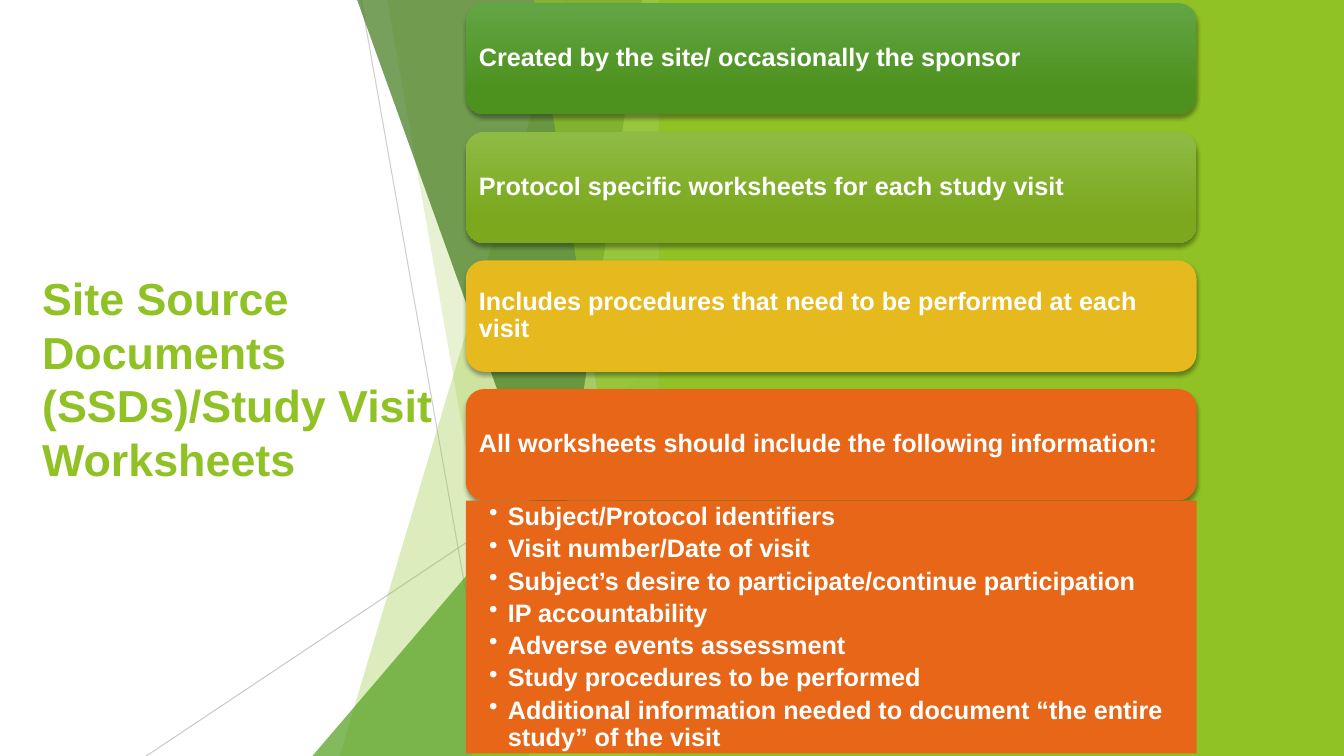
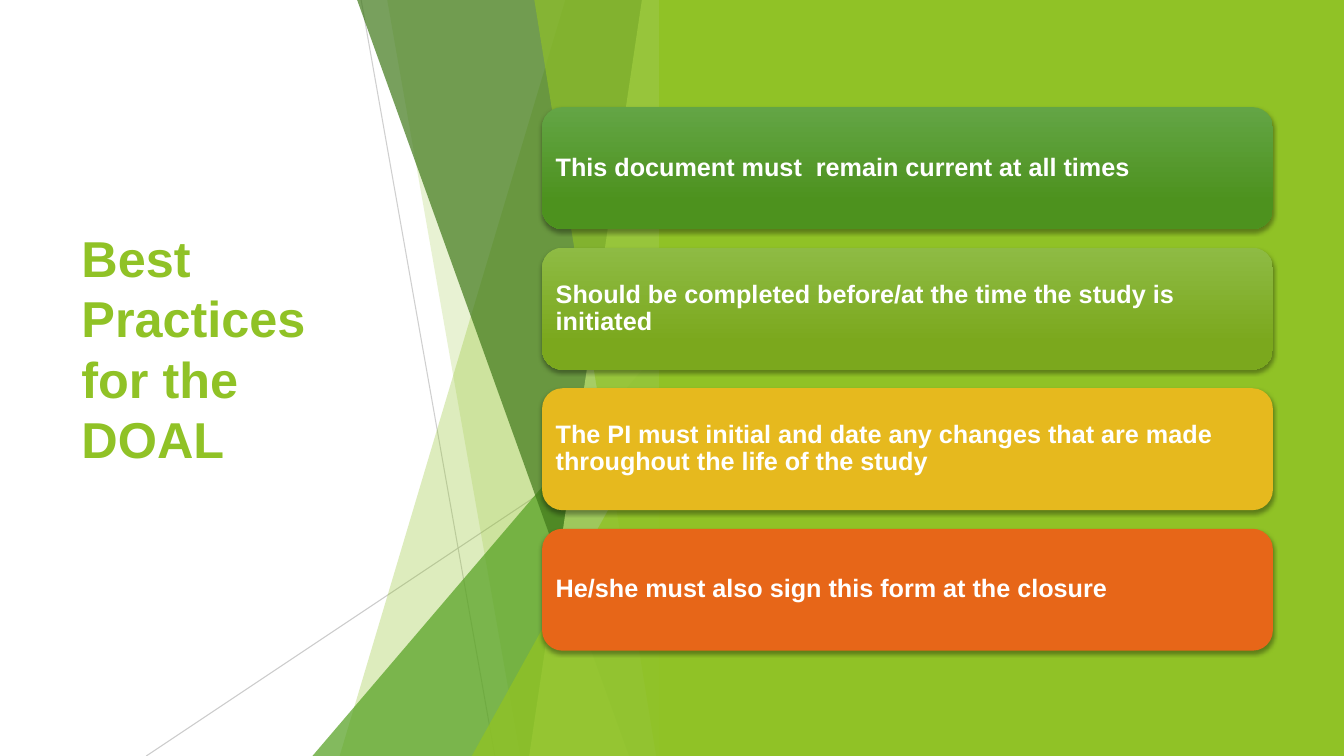
from pptx import Presentation
from pptx.dml.color import RGBColor
from pptx.enum import shapes, text
from pptx.oxml.ns import qn
from pptx.util import Pt
from lxml import etree

WIDTH, HEIGHT = 960, 540
FONT = "Arial"
COLORS = {
    "lime": "90C226", "green": "54A021", "dark green": "3F7819",
    "pale lime": "C0E474", "gray": "BFBFBF", "white": "FFFFFF", "black": "000000",
    "yellow": "E6B91E", "orange": "E76618",
    "card green top": "63A545", "card green": "4D921E",
    "card lime top": "8EBB44", "card lime": "7BA81D",
}
# One colour for a plain card, two for a gradient from top to bottom
CARD_FILLS = [("card green top", "card green"), ("card lime top", "card lime"),
              ("yellow",), ("orange",)]

# Start, end, opacity
RAYS = [((258, 0), (353.5, HEIGHT), 75), ((479.5, 290), (104.5, HEIGHT), 80)]
# Bands: left edge at top and at bottom. Triangles: left and top edge.
FACET_RIGHT, FACET_TOP = 479.5, -0.6
FACETS = [
    ("band", 404, 242.6, "lime", 30),
    ("band", 276.5, 371.5, "lime", 20),
    ("triangle", 223.2, 239.8, "green", 72),
    ("band", 254.9, 449.3, "dark green", 70),
    ("band", 458.6, 378, "pale lime", 70),
    ("band", 381.6, 468.7, "lime", 65),
    ("triangle", 337, 283, "lime", 80),
]
PANEL_LEFT = 470.8
CARD_WIDTH = 522

SLIDES = [
    {
        "title": "Site Source Documents (SSDs)/Study Visit Worksheets",
        "title_size": 32,
        "title_box": (23, 108.7, 314, 322.6),
        "cards_at": (332.7, 2.2), "card_height": 79.6, "card_step": 91.9,
        "cards": [
            "Created by the site/ occasionally the sponsor",
            "Protocol specific worksheets for each study visit",
            "Includes procedures that need to be performed at each visit",
            "All worksheets should include the following information:",
        ],
        "bullets": [
            "Subject/Protocol identifiers",
            "Visit number/Date of visit",
            "Subject’s desire to participate/continue participation",
            "IP accountability",
            "Adverse events assessment",
            "Study procedures to be performed",
            "Additional information needed to document “the entire study” of the visit",
        ],
    },
    {
        "title": "Best Practices for the DOAL",
        "title_size": 36,
        "title_box": (51.1, 108.7, 203, 279.6),
        "cards_at": (387.2, 76.5), "card_height": 87.1, "card_step": 100.4,
        "cards": [
            "This document must  remain current at all times",
            "Should be completed before/at the time the study is initiated",
            "The PI must initial and date any changes that are made throughout the life of the study",
            "He/she must also sign this form at the closure",
        ],
        "bullets": [],
    },
]


def rgb(name):
    return RGBColor.from_string(COLORS[name])


def points(*lengths):
    return [Pt(length) for length in lengths]


def set_opacity(element, percent):
    for color in element.iter(qn("a:srgbClr")):
        etree.SubElement(color, qn("a:alpha"), val=str(percent * 1000))


def paint(shape, *colors, opacity=100):
    """Fill with one colour or a downward gradient, with no outline or shadow."""
    shape.shadow.inherit = False
    shape.line.fill.background()
    if len(colors) == 1:
        shape.fill.solid()
        shape.fill.fore_color.rgb = rgb(colors[0])
    else:
        shape.fill.gradient()
        shape.fill.gradient_angle = 270
        for stop, color, position in zip(shape.fill.gradient_stops, colors, (0, 0.78)):
            stop.color.rgb = rgb(color)
            stop.position = position
    if opacity < 100:
        set_opacity(shape._element.spPr, opacity)


def add_shadow(shape):
    effects = shape._element.spPr.find(qn("a:effectLst"))
    shadow = etree.SubElement(effects, qn("a:outerShdw"), blurRad=str(Pt(3)),
                              dist=str(Pt(2)), dir="5400000", rotWithShape="0")
    etree.SubElement(shadow, qn("a:srgbClr"), val=COLORS["black"])
    set_opacity(shadow, 35)


def write(shape, lines, size, color, anchor, margins, line_spacing=1.0):
    frame = shape.text_frame
    frame.word_wrap = True
    frame.vertical_anchor = anchor
    (frame.margin_left, frame.margin_top,
     frame.margin_right, frame.margin_bottom) = points(*margins)
    frame.text = "\n".join(lines)
    for paragraph in frame.paragraphs:
        paragraph.alignment = text.PP_ALIGN.LEFT
        paragraph.line_spacing = line_spacing
        paragraph.font.name = FONT
        paragraph.font.size = Pt(size)
        paragraph.font.bold = True
        paragraph.font.color.rgb = rgb(color)
    return frame.paragraphs


def add_ray(slide, start, end, opacity):
    ray = slide.shapes.add_connector(shapes.MSO_CONNECTOR.STRAIGHT, *points(*start, *end))
    ray.line.width = Pt(0.75)
    ray.line.color.rgb = rgb("gray")
    properties = ray._element.spPr
    set_opacity(properties, opacity)
    etree.SubElement(properties, qn("a:effectLst"))


def add_facet(slide, kind, first, second, color, opacity):
    if kind == "band":
        builder = slide.shapes.build_freeform(*points(first, FACET_TOP))
        corners = [(FACET_RIGHT, FACET_TOP), (FACET_RIGHT, HEIGHT), (second, HEIGHT)]
        builder.add_line_segments([points(*corner) for corner in corners], close=True)
        facet = builder.convert_to_shape()
    else:
        facet = slide.shapes.add_shape(
            shapes.MSO_SHAPE.ISOSCELES_TRIANGLE,
            *points(first, second, FACET_RIGHT - first, HEIGHT - second))
        facet.adjustments[0] = 1
    paint(facet, color, opacity=opacity)


def add_backdrop(slide):
    for ray in RAYS:
        add_ray(slide, *ray)
    for facet in FACETS:
        add_facet(slide, *facet)
    panel = slide.shapes.add_shape(
        shapes.MSO_SHAPE.RECTANGLE, *points(PANEL_LEFT, 0, WIDTH - PANEL_LEFT, HEIGHT))
    paint(panel, "lime")


def add_title(slide, content):
    title = slide.shapes.add_textbox(*points(*content["title_box"]))
    write(title, [content["title"]], content["title_size"], "lime",
          text.MSO_ANCHOR.MIDDLE, (7.2, 3.6, 7.2, 3.6))


def add_cards(slide, content):
    """Stack the cards and return the bottom edge of the last one."""
    left, top = content["cards_at"]
    height = content["card_height"]
    for index, (label, fill) in enumerate(zip(content["cards"], CARD_FILLS)):
        card_top = top + index * content["card_step"]
        card = slide.shapes.add_shape(shapes.MSO_SHAPE.ROUNDED_RECTANGLE,
                                      *points(left, card_top, CARD_WIDTH, height))
        paint(card, *fill)
        add_shadow(card)
        write(card, [label], 18, "white", text.MSO_ANCHOR.MIDDLE, (5.5, 5, 5.5, 5), 0.9)
    return card_top + height


def add_bullets(slide, lines, left, top):
    box = slide.shapes.add_shape(shapes.MSO_SHAPE.RECTANGLE,
                                 *points(left, top, CARD_WIDTH, 180.7))
    paint(box, "orange")
    for paragraph in write(box, lines, 18, "white", text.MSO_ANCHOR.TOP,
                           (16.6, 2.3, 10, 2.3), 0.9):
        paragraph.space_after = Pt(3.6)
        properties = paragraph._p.get_or_add_pPr()
        properties.set("marL", str(Pt(13.5)))
        properties.set("indent", str(-Pt(13.5)))
        bullet = etree.Element(qn("a:buChar"), char="•")
        properties.find(qn("a:defRPr")).addprevious(bullet)


def main():
    presentation = Presentation()
    presentation.slide_width, presentation.slide_height = points(WIDTH, HEIGHT)
    for content in SLIDES:
        slide = presentation.slides.add_slide(presentation.slide_layouts[6])
        add_title(slide, content)
        add_backdrop(slide)
        cards_bottom = add_cards(slide, content)
        if content["bullets"]:
            add_bullets(slide, content["bullets"], content["cards_at"][0], cards_bottom)
    presentation.save("out.pptx")


if __name__ == "__main__":
    main()
